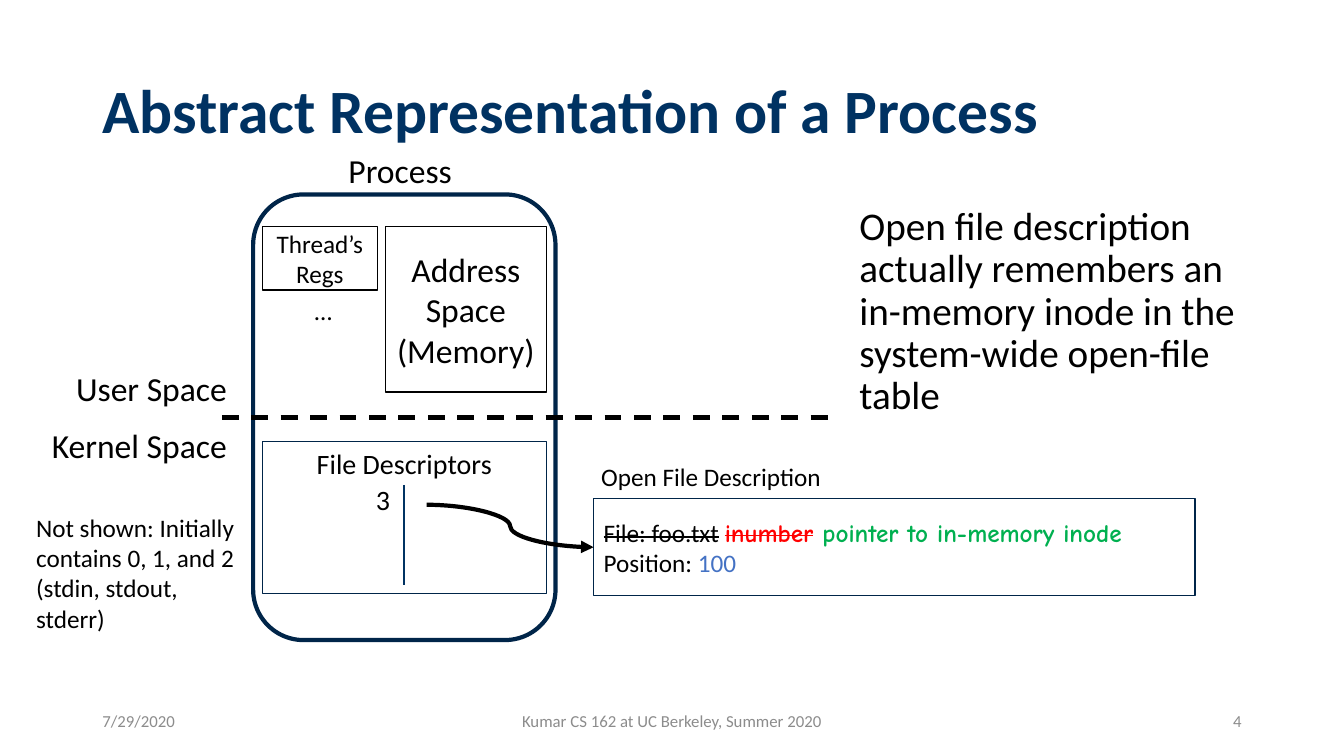
import pptx
import pptx.util
import pptx.dml.color
import pptx.enum.dml
import pptx.enum.shapes
import pptx.enum.text
from lxml import etree
from pptx.util import Cm, Pt

COLORS = {
    "title": "003262", "outline": "002549", "text": "000000", "paper": "FFFFFF",
    "footer": "8C8C8C", "struck": "FF0000", "pointer": "00B050", "value": "4472C4",
}
ALIGN = pptx.enum.text.PP_ALIGN
ANCHOR = pptx.enum.text.MSO_ANCHOR
SHAPE = pptx.enum.shapes.MSO_SHAPE
CONNECTOR = pptx.enum.shapes.MSO_CONNECTOR


def rgb(name):
    return pptx.dml.color.RGBColor.from_string(COLORS[name])


def style(p, size, color="text", align=ALIGN.LEFT, bold=False):
    p.alignment = align
    p.font.name = "Calibri"
    p.font.size = Pt(size)
    p.font.bold = bold
    p.font.color.rgb = rgb(color)


def add_text(s, box, text, size, color="text", align=ALIGN.LEFT,
             anchor=ANCHOR.TOP, bold=False, wrap=True):
    tf = s.shapes.add_textbox(*map(Cm, box)).text_frame
    tf.word_wrap = wrap
    tf.vertical_anchor = anchor
    p = tf.paragraphs[0]
    p.text = text
    style(p, size, color, align, bold)
    return p


def add_box(s, box, line="text", text="", size=18, anchor=ANCHOR.MIDDLE,
            kind=SHAPE.RECTANGLE, width=1, filled=True):
    sp = s.shapes.add_shape(kind, *map(Cm, box))
    sp.shadow.inherit = False
    if filled:
        sp.fill.solid()
        sp.fill.fore_color.rgb = rgb("paper")
    else:
        sp.fill.background()
    sp.line.color.rgb = rgb(line)
    sp.line.width = Pt(width)
    tf = sp.text_frame
    tf.word_wrap = True
    tf.vertical_anchor = anchor
    tf.paragraphs[0].text = text
    style(tf.paragraphs[0], size, align=ALIGN.CENTER)
    return sp


def add_line(s, start, end, color="text", width=3, kind=CONNECTOR.STRAIGHT):
    line = s.shapes.add_connector(kind, *map(Cm, start + end))
    line.line.color.rgb = rgb(color)
    line.line.width = Pt(width)
    etree.SubElement(line._element.spPr, pptx.oxml.ns.qn("a:effectLst"))
    return line


def add_heading(s, box):
    p = add_text(s, box, "Abstract Representation of a Process", 44, "title",
                 anchor=ANCHOR.MIDDLE, bold=True)
    p.line_spacing = 0.9


def add_remark(s, box):
    p = add_text(s, box, "Open file description actually remembers an in-memory "
                 "inode in the system-wide open-file table", 28)
    p.line_spacing = 0.9
    p.space_before = Pt(10)


def add_footer(s, box):
    x, y, w, h = box
    side, middle = 7.62, 11.43
    for left, width, text, align in (
        (x, side, "7/29/2020", ALIGN.LEFT),
        (x + (w - middle) / 2, middle, "Kumar CS 162 at UC Berkeley, Summer 2020",
         ALIGN.CENTER),
        (x + w - side, side, "4", ALIGN.RIGHT),
    ):
        add_text(s, (left, y, width, h), text, 12, "footer", align, ANCHOR.MIDDLE)


def add_space_border(s, box):
    """Dashed border between user and kernel space, with a label on each side."""
    x, y, w, h = box
    border = y + h / 2
    line = add_line(s, (x, border), (x + w, border))
    line.line.dash_style = pptx.enum.dml.MSO_LINE.DASH
    for text, top, width in (("User Space", y, 4.34),
                             ("Kernel Space", border + 0.05, 4.98)):
        add_text(s, (x + 0.38 - width, top, width, 1.27), text, 24,
                 align=ALIGN.RIGHT, wrap=False)


def add_process(s, box):
    """Process outline with its parts; returns where the descriptor's arrow starts."""
    x, y, w, h = box
    pad = 0.23
    add_box(s, box, "outline", kind=SHAPE.ROUNDED_RECTANGLE, width=3, filled=False)
    add_text(s, (x + 2.13, y - 1.24, 3.15, 1.27), "Process", 24,
             align=ALIGN.CENTER, wrap=False)
    add_box(s, (x + w - pad - 4.06, y + 0.81, 4.06, 4.17),
            text="Address Space (Memory)", size=24)
    add_box(s, (x + pad, y + 0.81, 2.9, 1.6), text="Thread’s Regs")
    add_text(s, (x + 1.3, y + 2.41, 0.97, 1.02), "…", 18, wrap=False)
    add_box(s, (x + pad, y + 6.22, w - 2 * pad, 3.84), "outline",
            "File Descriptors", 20, ANCHOR.TOP)
    add_line(s, (x + w / 2, y + 7.32), (x + w / 2, y + 9.83), "title", 1.5)
    add_text(s, (x + 2.84, y + 7.14, 0.86, 1.12), "3", 20,
             align=ALIGN.RIGHT, wrap=False)
    return x + 4.37, y + 7.82


def add_description(s, box):
    """Open file description; returns where the arrow enters it."""
    x, y, w, h = box
    add_text(s, (x - 0.1, y - 1.06, 6.12, 1.02), "Open File Description", 18,
             align=ALIGN.CENTER, wrap=False)
    tf = add_box(s, box, "outline").text_frame
    rows = (
        (("File: foo.txt", "text", True), (" ", "text", False),
         ("inumber", "struck", True), (" ", "struck", False),
         ("pointer to in-memory inode", "pointer", False)),
        (("Position: ", "text", False), ("100", "value", False)),
    )
    tf.add_paragraph()
    for p, row in zip(tf.paragraphs, rows):
        style(p, 18)
        for text, color, struck in row:
            r = p.add_run()
            r.text = text
            r.font.color.rgb = rgb(color)
            if color in ("struck", "pointer"):
                r.font.name = "Comic Neue"
                r.font.bold = True
            if struck:
                r.font._element.set("strike", "sngStrike")
    return x, y + h / 2


def add_arrow(s, start, end):
    arrow = add_line(s, start, end, kind=CONNECTOR.CURVE)
    etree.SubElement(arrow.line._get_or_add_ln(), pptx.oxml.ns.qn("a:tailEnd"),
                     type="triangle")


def main():
    prs = pptx.Presentation()
    prs.slide_width, prs.slide_height = Cm(33.87), Cm(19.05)
    s = prs.slides.add_slide(prs.slide_layouts[6])
    add_heading(s, (2.33, 1.01, 29.21, 3.68))
    add_remark(s, (21.41, 5.08, 10.11, 12.09))
    add_footer(s, (2.33, 17.65, 29.21, 1.02))
    start = add_process(s, (6.38, 4.9, 7.62, 11.23))
    add_space_border(s, (5.59, 9.14, 15.29, 2.76))
    add_text(s, (0.66, 12.78, 5.61, 3.33),
             "Not shown: Initially contains 0, 1, and 2 (stdin, stdout, stderr)", 18)
    end = add_description(s, (14.96, 12.57, 15.16, 2.44))
    add_arrow(s, start, end)
    prs.save("out.pptx")


if __name__ == "__main__":
    main()
